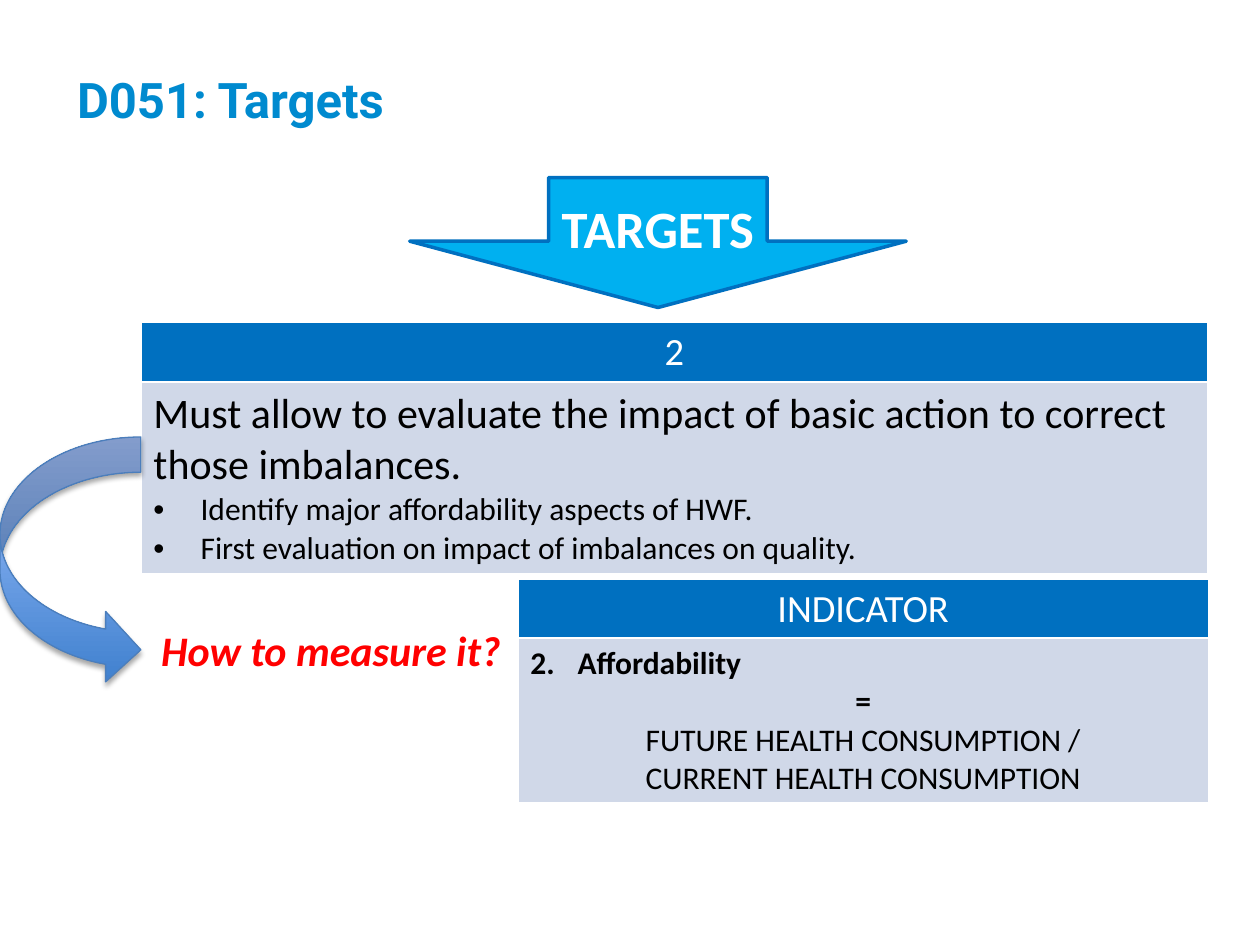
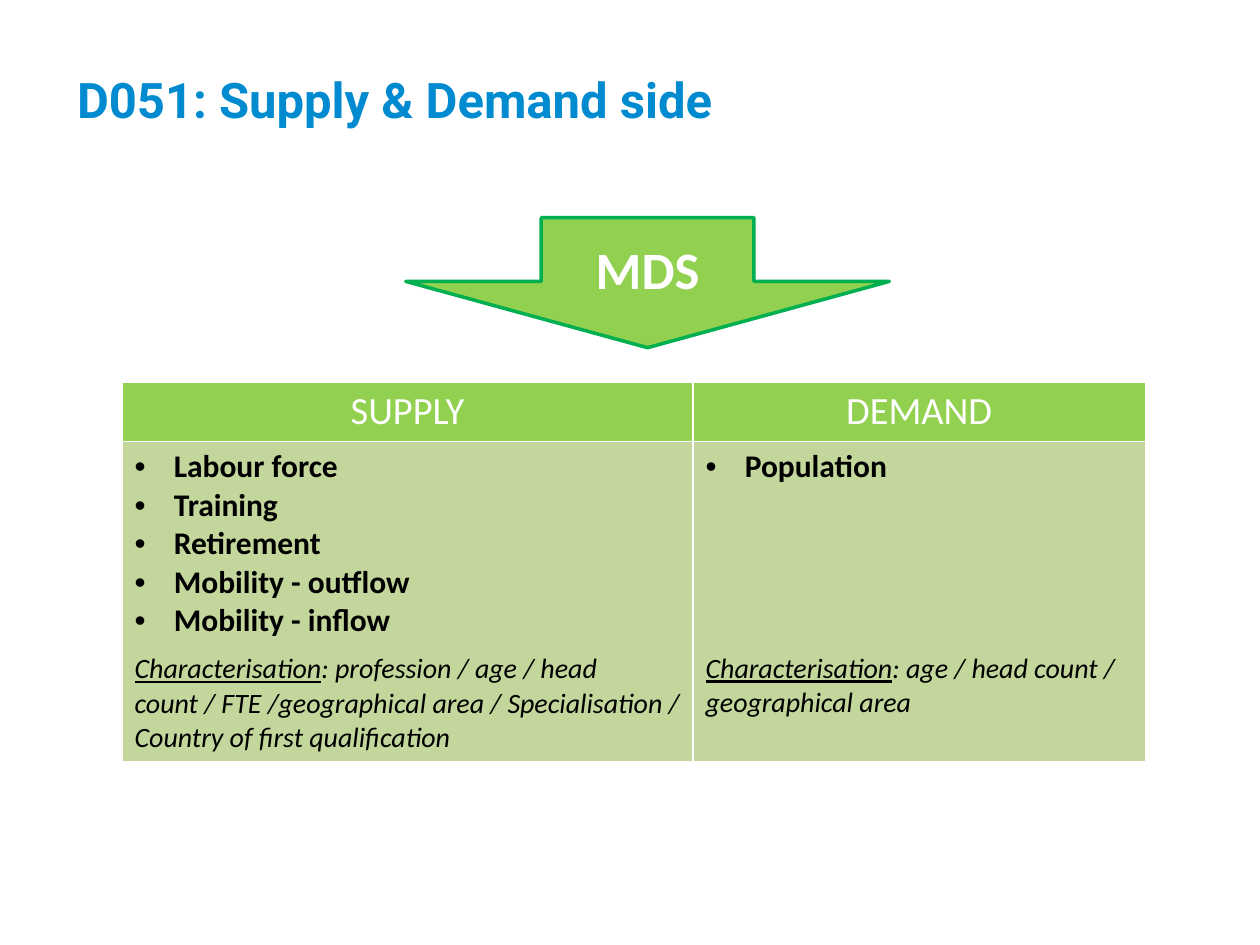
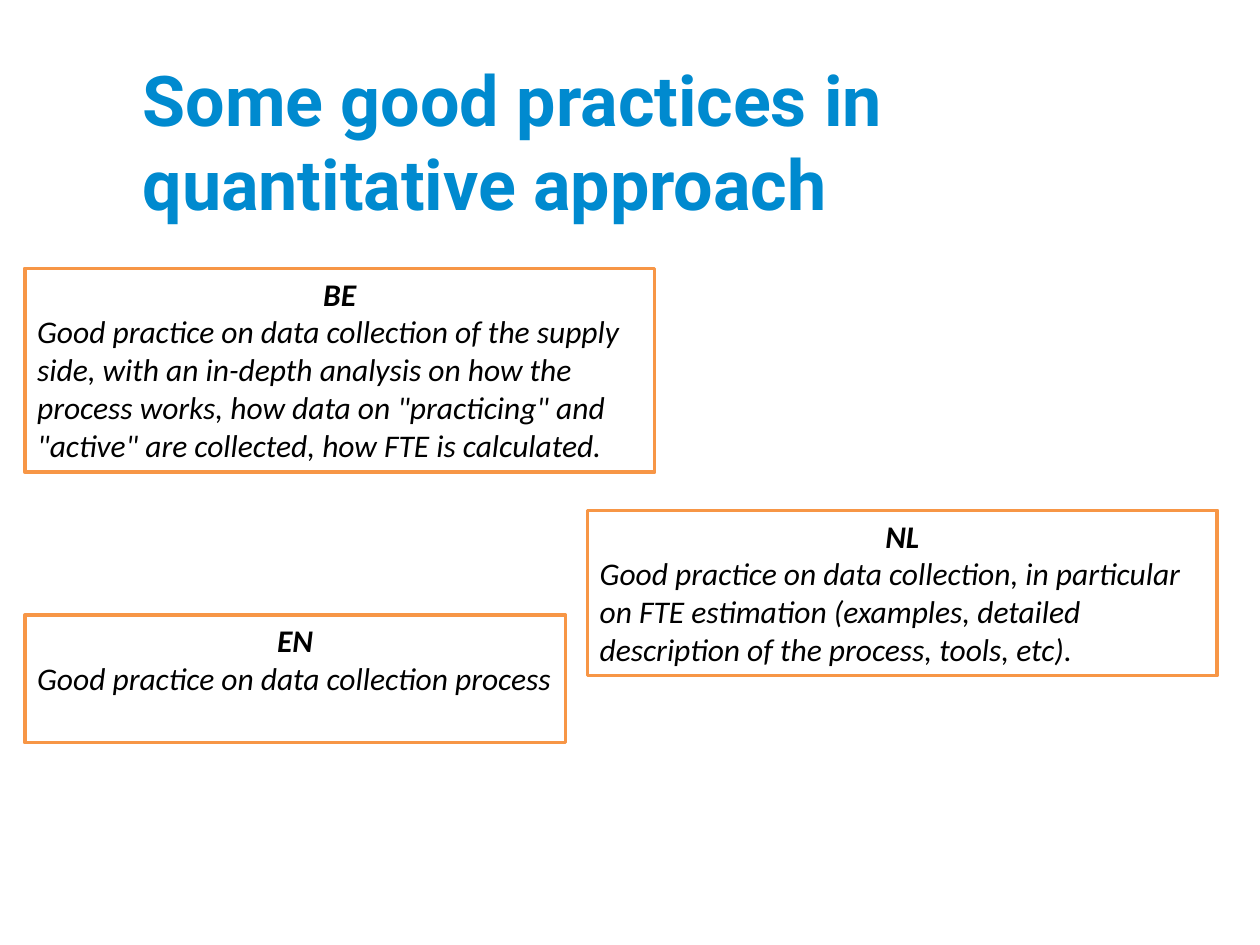
from lxml.etree import SubElement
from pptx import Presentation
from pptx.dml.color import RGBColor
from pptx.enum.shapes import MSO_SHAPE
from pptx.enum.text import MSO_ANCHOR, MSO_AUTO_SIZE, PP_ALIGN
from pptx.oxml import parse_xml
from pptx.oxml.ns import nsdecls, qn
from pptx.util import Cm, Pt

TITLE_BLUE = RGBColor(0x00, 0x8A, 0xCF)
SKY = RGBColor(0x00, 0xB0, 0xF0)
BLUE = RGBColor(0x00, 0x70, 0xC0)
PALE_BLUE = RGBColor(0xD0, 0xD8, 0xE8)
LIME = RGBColor(0x92, 0xD0, 0x50)
GREEN = RGBColor(0x00, 0xB0, 0x50)
PALE_GREEN = RGBColor(0xC3, 0xD6, 0x9B)
ORANGE = RGBColor(0xF7, 0x96, 0x46)
RED = RGBColor(0xFF, 0x00, 0x00)
WHITE = RGBColor(0xFF, 0xFF, 0xFF)
BLACK = RGBColor(0x00, 0x00, 0x00)
LOOP_DARK = RGBColor(0x3F, 0x80, 0xCE)
LOOP_LIGHT = RGBColor(0xA4, 0xC4, 0xFF)
LOOP_LINE = RGBColor(0x4B, 0x7E, 0xBC)

TITLE_FONT, BODY_FONT = "Roboto", "Calibri"
LINE_FACTOR = 1.22  # line height of the body font, in font sizes
LIST_SIZE = 18
NOTE_GAP = 7
HEADER_HEIGHT = 1.18
TITLE_AREA = (1.3, 1.27, 20.32, 3.5)

TARGET = [
    dict(text="Must allow to evaluate the impact of basic action to correct those imbalances.",
         size=24),
    dict(text="Identify major affordability aspects of HWF.", bullet="•", indent=0.95),
    dict(text="First evaluation on impact of imbalances on quality.", bullet="•", indent=0.95),
]
INDICATOR = [
    dict(text="Affordability", number=2, indent=0.95, bold=True),
    dict(text="=", align=PP_ALIGN.CENTER, bold=True),
    dict(text="FUTURE HEALTH CONSUMPTION /", align=PP_ALIGN.CENTER),
    dict(text="CURRENT HEALTH CONSUMPTION", align=PP_ALIGN.CENTER),
]
# heading, data items, characterisation
DATA_SET = [
    ("SUPPLY",
     ["Labour force", "Training", "Retirement", "Mobility - outflow", "Mobility - inflow"],
     "profession / age / head count / FTE /geographical area / Specialisation / "
     "Country of first qualification"),
    ("DEMAND", ["Population"], "age / head count / geographical area"),
]
# country, practice, area
PRACTICES = [
    ("BE", "Good practice on data collection of the supply side, with an in-depth analysis "
     "on how the process works, how data on \"practicing\" and \"active\" are collected, "
     "how FTE is calculated.", (0.5, 5.41, 12.7, 4.11)),
    ("NL", "Good practice on data collection, in particular on FTE estimation (examples, "
     "detailed description of the process, tools, etc).", (11.84, 10.29, 12.7, 3.33)),
    ("EN", "Good practice on data collection process", (0.5, 12.4, 10.9, 2.57)),
]


def lengths(area):
    return [Cm(value) for value in area]


def write(para, text, size=LIST_SIZE, color=BLACK, font=BODY_FONT, bold=False, italic=False,
          underline=False, align=PP_ALIGN.LEFT, before=0, margin=0, indent=0,
          bullet=None, number=None):
    """Add a formatted span to para; indent hangs the bullet or number to its left."""
    para.alignment = align
    para.space_before = Pt(before)
    properties = para._p.get_or_add_pPr()
    properties.set("marL", str(Cm(margin + indent)))
    properties.set("indent", str(-Cm(indent)))
    if bullet:
        SubElement(properties, qn("a:buFont"), typeface="Arial")
        SubElement(properties, qn("a:buChar"), char=bullet)
    elif number:
        SubElement(properties, qn("a:buAutoNum"), type="arabicPeriod", startAt=str(number))
    span = para.add_run()
    span.text = text
    span.font.name, span.font.size = font, Pt(size)
    span.font.bold, span.font.italic, span.font.underline = bold, italic, underline
    span.font.color.rgb = color


def write_all(frame, items):
    """Write one paragraph per item; an item marked joined continues the last one."""
    para = None
    for item in items:
        options = dict(item)
        joined = options.pop("joined", False)
        if para is None:
            para = frame.paragraphs[0]
        elif not joined:
            para = frame.add_paragraph()
        write(para, **options)


def add_page(deck, title, area=TITLE_AREA, size=28, margin=0):
    page = deck.slides.add_slide(deck.slide_layouts[5])
    box = page.shapes.title
    box.left, box.top, box.width, box.height = lengths(area)
    frame = box.text_frame
    frame.auto_size = MSO_AUTO_SIZE.NONE
    frame.vertical_anchor = MSO_ANCHOR.TOP
    write(frame.paragraphs[0], title, size=size, font=TITLE_FONT, color=TITLE_BLUE,
          bold=True, margin=margin)
    return page


def add_shape(page, kind, area, fill, line, line_width=2):
    shape = page.shapes.add_shape(kind, *lengths(area))
    shape.shadow.inherit = False
    shape.fill.solid()
    shape.fill.fore_color.rgb = fill
    shape.line.color.rgb = line
    shape.line.width = Pt(line_width)
    return shape


def add_down_arrow(page, text, area, fill, line):
    arrow = add_shape(page, MSO_SHAPE.DOWN_ARROW, area, fill, line)
    arrow.adjustments[0], arrow.adjustments[1] = 0.44, 0.51
    frame = arrow.text_frame
    frame.margin_left = frame.margin_right = 0
    frame.vertical_anchor = MSO_ANCHOR.MIDDLE
    write(frame.paragraphs[0], text, size=30, color=WHITE, bold=True, align=PP_ALIGN.CENTER)


def add_loop_arrow(page, area):
    arrow = add_shape(page, MSO_SHAPE.CURVED_RIGHT_ARROW, area, LOOP_DARK, LOOP_LINE, 0.75)
    arrow.fill.gradient()
    arrow.fill.gradient_angle = 90
    for stop, color in zip(arrow.fill.gradient_stops, (LOOP_DARK, LOOP_LIGHT)):
        stop.color.rgb = color
    effects = arrow._element.spPr.find(qn("a:effectLst"))
    effects.append(parse_xml(
        f'<a:outerShdw {nsdecls("a")} blurRad="{Pt(3.1)}" dist="{Pt(1.8)}" dir="5400000" '
        'rotWithShape="0"><a:srgbClr val="000000"><a:alpha val="35000"/></a:srgbClr>'
        '</a:outerShdw>'))


def style_cell(cell, fill):
    properties = cell._tc.get_or_add_tcPr()
    for side in ("lnL", "lnR", "lnT", "lnB"):
        properties.append(parse_xml(
            f'<a:{side} {nsdecls("a")} w="{Pt(1)}"><a:solidFill><a:srgbClr val="{WHITE}"/>'
            f'</a:solidFill></a:{side}>'))
    cell.fill.solid()
    cell.fill.fore_color.rgb = fill


def add_headed_table(page, left, top, widths, body_height, columns, header_fill, body_fill):
    """Add a table of two rows; columns holds a heading and its paragraphs for each column."""
    area = (left, top, sum(widths), HEADER_HEIGHT + body_height)
    table = page.shapes.add_table(2, len(columns), *lengths(area)).table
    table.first_row = table.horz_banding = False
    table.rows[0].height, table.rows[1].height = Cm(HEADER_HEIGHT), Cm(body_height)
    for index, (heading, items) in enumerate(columns):
        table.columns[index].width = Cm(widths[index])
        header, body = table.cell(0, index), table.cell(1, index)
        style_cell(header, header_fill)
        style_cell(body, body_fill)
        write(header.text_frame.paragraphs[0], heading, size=22, color=WHITE,
              align=PP_ALIGN.CENTER)
        write_all(body.text_frame, items)


def data_set_items(entries, characterisation, longest):
    """List the entries, then the note, level with the note under the longest list."""
    gap = NOTE_GAP + (longest - len(entries)) * LIST_SIZE * LINE_FACTOR
    note = dict(size=16, italic=True, before=round(gap, 1))
    items = [dict(text=entry, bullet="•", indent=0.79, bold=True) for entry in entries]
    items.append(dict(text="Characterisation", underline=True, **note))
    items.append(dict(text=": " + characterisation, joined=True, **note))
    return items


def build_targets(deck):
    page = add_page(deck, "D051: Targets")
    add_down_arrow(page, "TARGETS", (8.26, 3.58, 10.01, 2.62), SKY, BLUE)
    add_headed_table(page, 2.84, 6.5, [21.51], 3.87, [("2", TARGET)], BLUE, PALE_BLUE)
    add_loop_arrow(page, (0, 8.81, 2.84, 5))
    question = page.shapes.add_textbox(*lengths((3, 12.47, 7.44, 1.27))).text_frame
    question.word_wrap = False
    write(question.paragraphs[0], "How to measure it?", size=24, color=RED,
          bold=True, italic=True)
    add_headed_table(page, 10.44, 11.68, [13.92], 3.32, [("INDICATOR", INDICATOR)],
                     BLUE, PALE_BLUE)


def build_supply_and_demand(deck):
    page = add_page(deck, "D051: Supply & Demand side")
    longest = max(len(entries) for _, entries, _ in DATA_SET)
    columns = [(heading, data_set_items(entries, note, longest))
               for heading, entries, note in DATA_SET]
    add_headed_table(page, 2.46, 7.7, [11.51, 9.12], 6.36, columns, LIME, PALE_GREEN)
    add_down_arrow(page, "MDS", (8.18, 4.39, 9.75, 2.62), LIME, GREEN)


def build_practices(deck):
    page = add_page(deck, "Some good practices in quantitative approach",
                    area=(1.35, 1.02, 21.72, 3.18), size=40, margin=1.27)
    for country, practice, area in PRACTICES:
        card = add_shape(page, MSO_SHAPE.RECTANGLE, area, WHITE, ORANGE)
        card.text_frame.word_wrap = True
        card.text_frame.vertical_anchor = MSO_ANCHOR.TOP
        write_all(card.text_frame, [
            dict(text=country, bold=True, italic=True, align=PP_ALIGN.CENTER),
            dict(text=practice, italic=True),
        ])


def main():
    deck = Presentation()
    deck.slide_width, deck.slide_height = Cm(25.4), Cm(19.05)
    build_targets(deck)
    build_supply_and_demand(deck)
    build_practices(deck)
    deck.save("out.pptx")


if __name__ == "__main__":
    main()
